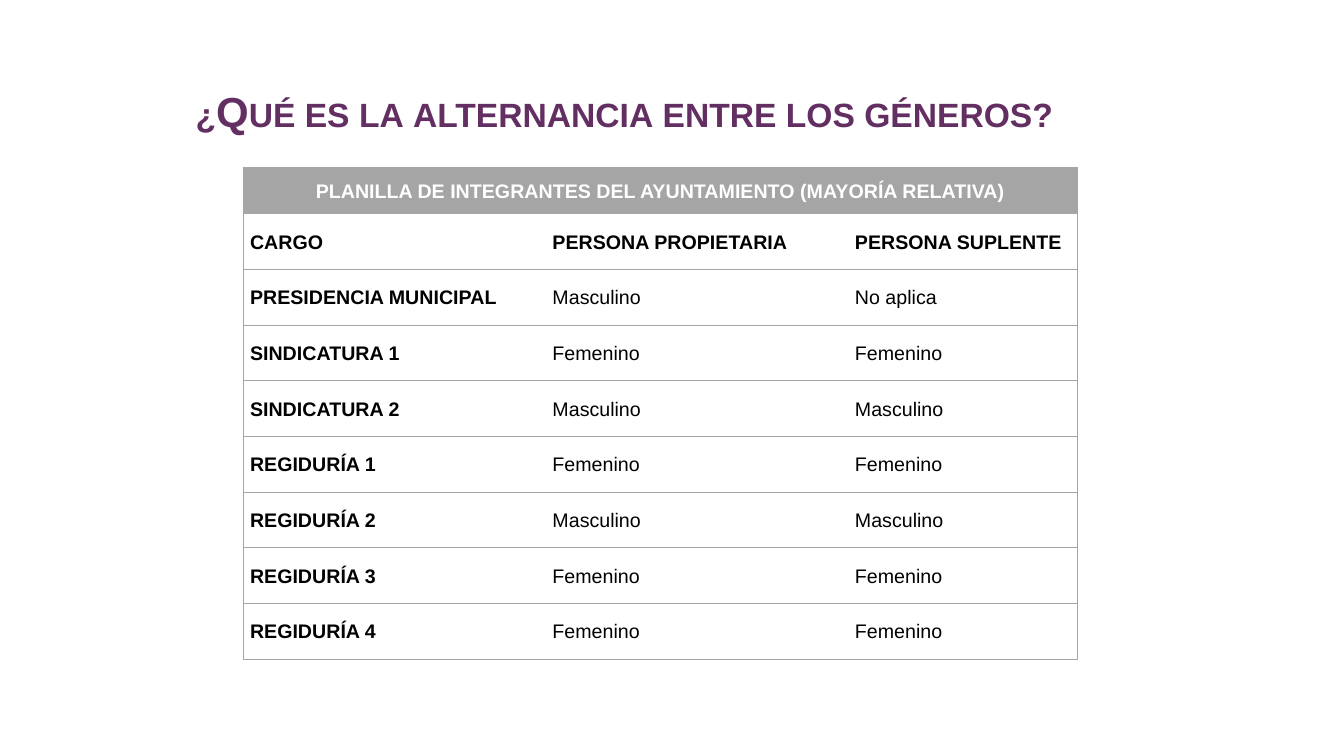
from dataclasses import dataclass

import pptx
import pptx.dml.color
import pptx.enum.text
import pptx.oxml
import pptx.oxml.ns
import pptx.table
import pptx.util
from pptx.util import Inches

PURPLE = pptx.dml.color.RGBColor(0x63, 0x2E, 0x62)
GRAY = pptx.dml.color.RGBColor(0xA5, 0xA5, 0xA5)
WHITE = pptx.dml.color.RGBColor(0xFF, 0xFF, 0xFF)
BLACK = pptx.dml.color.RGBColor(0x00, 0x00, 0x00)
FONT = "Arial"
ALIGN = pptx.enum.text.PP_ALIGN
MIDDLE = pptx.enum.text.MSO_ANCHOR.MIDDLE


@dataclass(frozen=True)
class Post:
    cargo: str
    propietaria: str
    suplente: str


TITLE = "¿Qué es la alternancia entre los géneros?"
TABLE_HEADING = "PLANILLA DE INTEGRANTES DEL AYUNTAMIENTO (MAYORÍA RELATIVA)"
POSTS = [
    Post("CARGO", "PERSONA PROPIETARIA", "PERSONA SUPLENTE"),
    Post("PRESIDENCIA MUNICIPAL", "Masculino", "No aplica"),
    Post("SINDICATURA 1", "Femenino", "Femenino"),
    Post("SINDICATURA 2", "Masculino", "Masculino"),
    Post("REGIDURÍA 1", "Femenino", "Femenino"),
    Post("REGIDURÍA 2", "Masculino", "Masculino"),
    Post("REGIDURÍA 3", "Femenino", "Femenino"),
    Post("REGIDURÍA 4", "Femenino", "Femenino"),
]
COLUMN_WIDTHS = [3, 3, 2.28]
TABLE_HEIGHT = 4.88
HEADING_HEIGHT = 0.46


def add_span(para, text: str, size: float, color: pptx.dml.color.RGBColor, bold: bool):
    span = para.add_run()
    span.text = text
    span.font.name = FONT
    span.font.size = pptx.util.Pt(size)
    span.font.bold = bold
    span.font.color.rgb = color
    return span


def set_borders(cell: pptx.table._Cell, visible: str) -> None:
    """Draw the sides named in visible (letters of LRTB) and clear the others."""
    properties = cell._tc.get_or_add_tcPr()
    for side in "LRTB":
        paint = f'<a:solidFill><a:srgbClr val="{GRAY}"/></a:solidFill>' if side in visible else "<a:noFill/>"
        properties.append(pptx.oxml.parse_xml(
            f'<a:ln{side} {pptx.oxml.ns.nsdecls("a")} w="6350">{paint}</a:ln{side}>'))


def format_cell(cell: pptx.table._Cell, column: int) -> None:
    """Set borders, insets and anchor; only the table's outer vertical lines show."""
    sides = "TB" + ("L" if column == 0 else "") + ("R" if column == len(COLUMN_WIDTHS) - 1 else "")
    set_borders(cell, sides)
    cell.margin_left = cell.margin_right = Inches(0.07)
    cell.margin_top = cell.margin_bottom = 0
    cell.vertical_anchor = MIDDLE


def write_cell(cell: pptx.table._Cell, text: str, align: ALIGN,
               color: pptx.dml.color.RGBColor, bold: bool) -> None:
    para = cell.text_frame.paragraphs[0]
    para.alignment = align
    para.line_spacing = 1.07
    add_span(para, text, 14, color, bold)


def add_title(page) -> None:
    box = page.shapes.title
    box.left, box.top, box.width, box.height = map(Inches, (1.84, 0.87, 9.43, 0.53))
    frame = box.text_frame
    frame.auto_size = pptx.enum.text.MSO_AUTO_SIZE.NONE
    frame.word_wrap = True
    frame.vertical_anchor = MIDDLE
    para = frame.paragraphs[0]
    para.alignment = ALIGN.LEFT
    para.line_spacing = 0.9
    span = add_span(para, TITLE, 30, PURPLE, True)
    span.font._element.set("cap", "small")


def add_posts_table(page) -> None:
    table = page.shapes.add_table(
        len(POSTS) + 1, len(COLUMN_WIDTHS), Inches(2.41), Inches(1.66),
        Inches(sum(COLUMN_WIDTHS)), Inches(TABLE_HEIGHT)).table
    table.horz_banding = False
    for column, width in zip(table.columns, COLUMN_WIDTHS):
        column.width = Inches(width)
    for index, row in enumerate(table.rows):
        body_height = (TABLE_HEIGHT - HEADING_HEIGHT) / len(POSTS)
        row.height = Inches(HEADING_HEIGHT if index == 0 else body_height)
        for column, cell in enumerate(row.cells):
            format_cell(cell, column)
            if index == 0:
                cell.fill.solid()
                cell.fill.fore_color.rgb = GRAY
            else:
                cell.fill.background()

    heading = table.cell(0, 0)
    heading.merge(table.cell(0, len(COLUMN_WIDTHS) - 1))
    write_cell(heading, TABLE_HEADING, ALIGN.CENTER, WHITE, True)
    for index, post in enumerate(POSTS, start=1):
        for column, text in enumerate((post.cargo, post.propietaria, post.suplente)):
            bold = index == 1 or column == 0
            write_cell(table.cell(index, column), text, ALIGN.JUSTIFY, BLACK, bold)


def main() -> None:
    deck = pptx.Presentation()
    deck.slide_width = Inches(13.33)
    deck.slide_height = Inches(7.5)
    page = deck.slides.add_slide(deck.slide_layouts.get_by_name("Title Only"))
    add_posts_table(page)
    add_title(page)
    deck.save("out.pptx")


if __name__ == "__main__":
    main()
